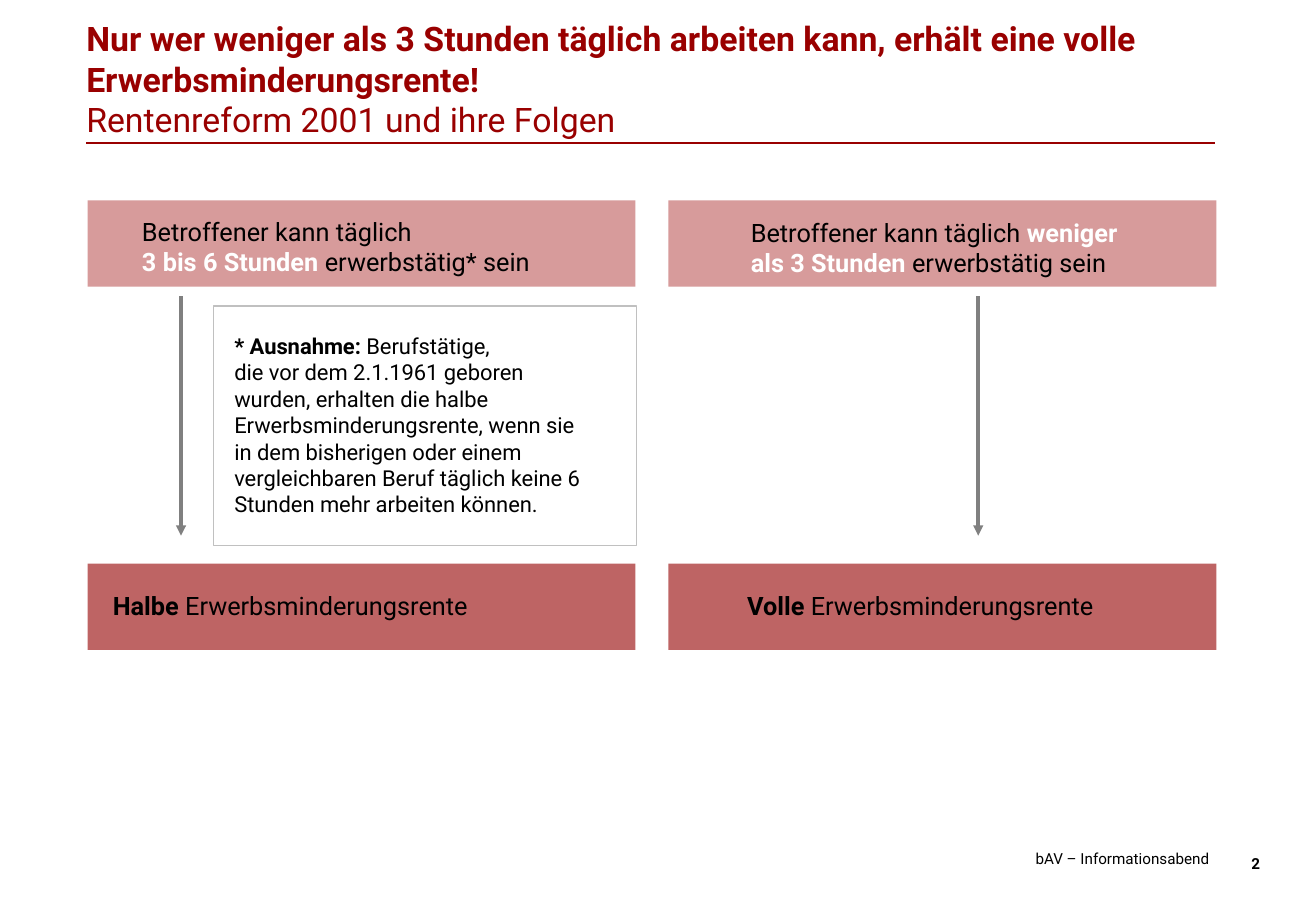
"""Build the slide on the reduced earning capacity pension."""
from lxml import etree
from pptx import Presentation
from pptx.dml.color import RGBColor
from pptx.enum.shapes import MSO_CONNECTOR, MSO_SHAPE
from pptx.enum.text import MSO_ANCHOR, MSO_AUTO_SIZE, PP_ALIGN
from pptx.oxml.ns import qn
from pptx.util import Inches, Pt

LINE, RECT = MSO_CONNECTOR.STRAIGHT, MSO_SHAPE.RECTANGLE
TOP, BOTTOM = MSO_ANCHOR.TOP, MSO_ANCHOR.BOTTOM
LEFT, RIGHT = PP_ALIGN.LEFT, PP_ALIGN.RIGHT
NO_FIT = MSO_AUTO_SIZE.NONE
RED, ROSE, DARK = "990000", "D79B9B", "BE6464"
BLACK, WHITE, GRAY, SILVER = "000000", "FFFFFF", "808080", "C0C0C0"


def tint(target, color):
    target.rgb = RGBColor.from_string(color)


def write(box, size, parts, align=LEFT, anchor=TOP, inset=True, wrap=True):
    frame = box.text_frame
    frame.auto_size = NO_FIT
    frame.word_wrap = wrap
    frame.vertical_anchor = anchor
    if not inset:
        frame.margin_left = frame.margin_right = 0
        frame.margin_top = frame.margin_bottom = 0
    para = frame.paragraphs[0]
    para.alignment = align
    para.line_spacing = 1
    para.space_before = Pt(0)
    para.font.name = "Roboto"
    para.font.size = Pt(size)
    for text, color, bold in parts:
        for row, piece in enumerate(text.split("\n")):
            if row:
                para.add_line_break()
            if piece:
                run = para.add_run()
                run.text = piece
                run.font.bold = bold
                tint(run.font.color, color)


deck = Presentation()
deck.slide_width, deck.slide_height = Inches(10.83), Inches(7.5)
slide = deck.slides.add_slide(deck.slide_layouts[5])
shapes = slide.shapes

title = shapes.title
title.left, title.top = Inches(0.71), Inches(0.15)
title.width, title.height = Inches(9.29), Inches(1)
write(title, 20, [
    ("Nur wer weniger als 3 Stunden täglich arbeiten kann, erhält eine volle "
     "Erwerbsminderungsrente!\n", RED, True),
    ("Rentenreform 2001 und ihre Folgen", RED, False),
], inset=False)

bars = [(x, y, 4.51, 0.71, fill, None)
        for x in (0.72, 5.5) for y, fill in ((1.65, ROSE), (4.64, DARK))]
frame = (1.76, 2.52, 3.48, 1.97, None, SILVER)
for x, y, w, h, fill, edge in bars + [frame]:
    rect = shapes.add_shape(RECT, Inches(x), Inches(y), Inches(w), Inches(h))
    rect.shadow.inherit = False
    if fill:
        rect.fill.solid()
        tint(rect.fill.fore_color, fill)
    else:
        rect.fill.background()
    if edge:
        tint(rect.line.color, edge)
        rect.line.width = Pt(0.75)
    else:
        rect.line.fill.background()

lines = [
    (0.71, 1.18, 10, 1.18, RED, 1, False),
    (1.49, 2.44, 1.49, 4.41, GRAY, 2, True),
    (8.05, 2.44, 8.05, 4.41, GRAY, 2, True),
]
for x1, y1, x2, y2, color, width, arrow in lines:
    line = shapes.add_connector(
        LINE, Inches(x1), Inches(y1), Inches(x2), Inches(y2))
    tint(line.line.color, color)
    line.line.width = Pt(width)
    if arrow:
        etree.SubElement(
            line.line._get_or_add_ln(), qn("a:tailEnd"), type="triangle")
    etree.SubElement(line._element.spPr, qn("a:effectLst"))

labels = [
    (1.07, 1.73, 3.92, 0.6, 15, True, [
        ("Betroffener kann täglich\n", BLACK, False),
        ("3 bis 6 Stunden", WHITE, True),
        (" erwerbstätig* sein", BLACK, False)]),
    (6.08, 1.74, 3.55, 0.6, 15, False, [
        ("Betroffener kann täglich ", BLACK, False),
        ("weniger\nals 3 Stunden", WHITE, True),
        (" erwerbstätig sein", BLACK, False)]),
    (1.83, 2.69, 3.16, 1.84, 13, True, [
        ("* Ausnahme:", BLACK, True),
        (" Berufstätige,\ndie vor dem 2.1.1961 geboren wurden, erhalten die "
         "halbe Erwerbsminderungsrente, wenn sie in dem bisherigen oder einem "
         "vergleichbaren Beruf täglich keine 6 Stunden mehr arbeiten können.",
         BLACK, False)]),
    (0.83, 4.81, 3.4, 0.35, 15, False, [
        ("Halbe", BLACK, True), (" Erwerbsminderungsrente", BLACK, False)]),
    (6.05, 4.81, 3.3, 0.35, 15, False, [
        ("Volle", BLACK, True), (" Erwerbsminderungsrente", BLACK, False)]),
]
for x, y, w, h, size, wrap, parts in labels:
    box = shapes.add_textbox(Inches(x), Inches(y), Inches(w), Inches(h))
    write(box, size, parts, wrap=wrap)

notes = [
    (6.52, 6.99, 3.43, "bAV – Informationsabend", False),
    (10, 7.03, 0.37, "2", True),
]
for x, y, w, text, bold in notes:
    box = shapes.add_textbox(Inches(x), Inches(y), Inches(w), Inches(0.15))
    write(box, 9, [(text, BLACK, bold)], RIGHT, BOTTOM, inset=False)

deck.save("out.pptx")
